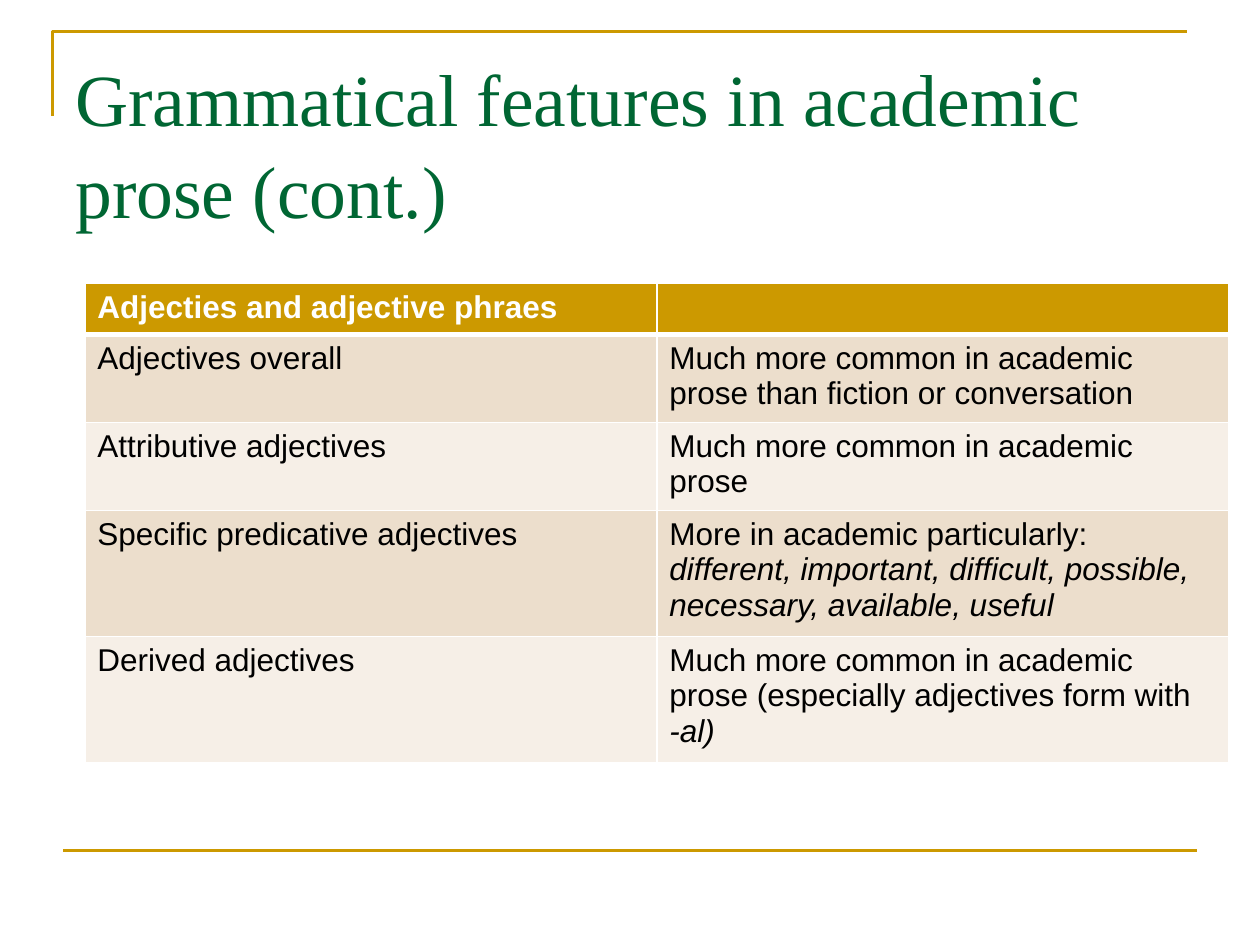
"""Build a slide with a table of adjective features in academic prose."""
from lxml import etree
from pptx import Presentation
from pptx.dml.color import RGBColor
from pptx.enum.shapes import MSO_CONNECTOR
from pptx.enum.text import MSO_ANCHOR
from pptx.oxml.ns import qn
from pptx.util import Cm, Pt

STRAIGHT = MSO_CONNECTOR.STRAIGHT
TOP = MSO_ANCHOR.TOP
GOLD = RGBColor(0xCC, 0x99, 0x00)
GREEN = RGBColor(0x00, 0x66, 0x33)
WHITE = RGBColor(0xFF, 0xFF, 0xFF)
BLACK = RGBColor(0x00, 0x00, 0x00)
SAND = RGBColor(0xEC, 0xDE, 0xCC)
CREAM = RGBColor(0xF6, 0xEF, 0xE7)


def write(frame, text, italic_tail="", font="Arial", size=18, color=BLACK, bold=False):
    para = frame.paragraphs[0]
    para.font.size = Pt(size)
    for part, italic in ((text, False), (italic_tail, True)):
        if part:
            span = para.add_run()
            span.text = part
            span.font.name = font
            span.font.size = Pt(size)
            span.font.bold = bold
            span.font.italic = italic
            span.font.color.rgb = color
    return para


def add_border(cell, edge, width):
    properties = cell._tc.get_or_add_tcPr()
    line = etree.SubElement(properties, qn(f"a:ln{edge}"), w=str(Pt(width)))
    fill = etree.SubElement(line, qn("a:solidFill"))
    etree.SubElement(fill, qn("a:srgbClr"), val=str(WHITE))


deck = Presentation()
deck.slide_width = Cm(25.4)
deck.slide_height = Cm(19.05)
page = deck.slides.add_slide(deck.slide_layouts[6])

builder = page.shapes.build_freeform(Cm(1.06), Cm(2.34))
builder.add_line_segments([(Cm(1.06), Cm(0.64)), (Cm(23.92), Cm(0.64))], close=False)
corner = builder.convert_to_shape()
corner.shadow.inherit = False
corner.fill.background()

footer_rule = page.shapes.add_connector(STRAIGHT, Cm(1.27), Cm(17.15), Cm(24.13), Cm(17.15))
etree.SubElement(footer_rule._element.spPr, qn("a:effectLst"))
for outline in (corner.line, footer_rule.line):
    outline.color.rgb = GOLD
    outline.width = Pt(1.5)

title_box = page.shapes.add_textbox(Cm(1.27), Cm(0.76), Cm(22.86), Cm(3.18))
title_box.text_frame.word_wrap = True
title_box.text_frame.vertical_anchor = TOP
title_box.text_frame.margin_top = Cm(0.24)
title = write(title_box.text_frame, "Grammatical features in academic prose (cont.)",
              font="Times New Roman", size=42, color=GREEN)
title.line_spacing = 1.04

rows = [
    (0.94, "Adjecties and adjective phraes", "", ""),
    (1.68, "Adjectives overall",
     "Much more common in academic prose than fiction or conversation", ""),
    (1.68, "Attributive adjectives", "Much more common in academic prose", ""),
    (2.39, "Specific predicative adjectives", "More in academic particularly: ",
     "different, important, difficult, possible, necessary, available, useful"),
    (2.39, "Derived adjectives",
     "Much more common in academic prose (especially adjectives form with ", "-al)"),
]
table_height = sum(row[0] for row in rows)
table = page.shapes.add_table(len(rows), 2, Cm(1.71), Cm(5.72),
                              Cm(23.06), Cm(table_height)).table
for column in table.columns:
    column.width = Cm(11.53)

for index, (height, feature, finding, examples) in enumerate(rows):
    header = index == 0
    table.rows[index].height = Cm(height)
    for cell, text, tail in zip(table.rows[index].cells, (feature, finding), ("", examples)):
        write(cell.text_frame, text, tail, color=WHITE if header else BLACK, bold=header)
        top_width = 3 if index == 1 else 1
        bottom_width = 3 if header else 1
        for edge, width in (("L", 1), ("R", 1), ("T", top_width), ("B", bottom_width)):
            add_border(cell, edge, width)
        cell.fill.solid()
        cell.fill.fore_color.rgb = GOLD if header else (CREAM, SAND)[index % 2]

deck.save("out.pptx")
